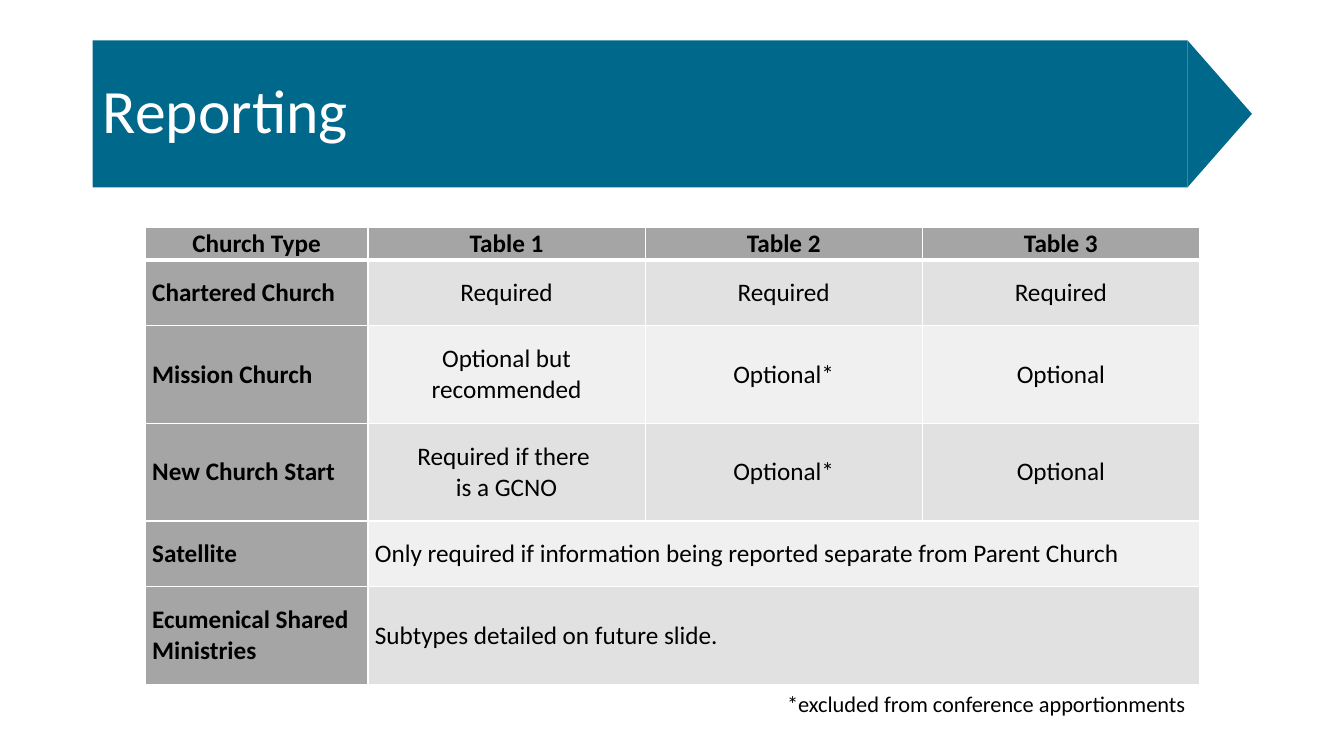
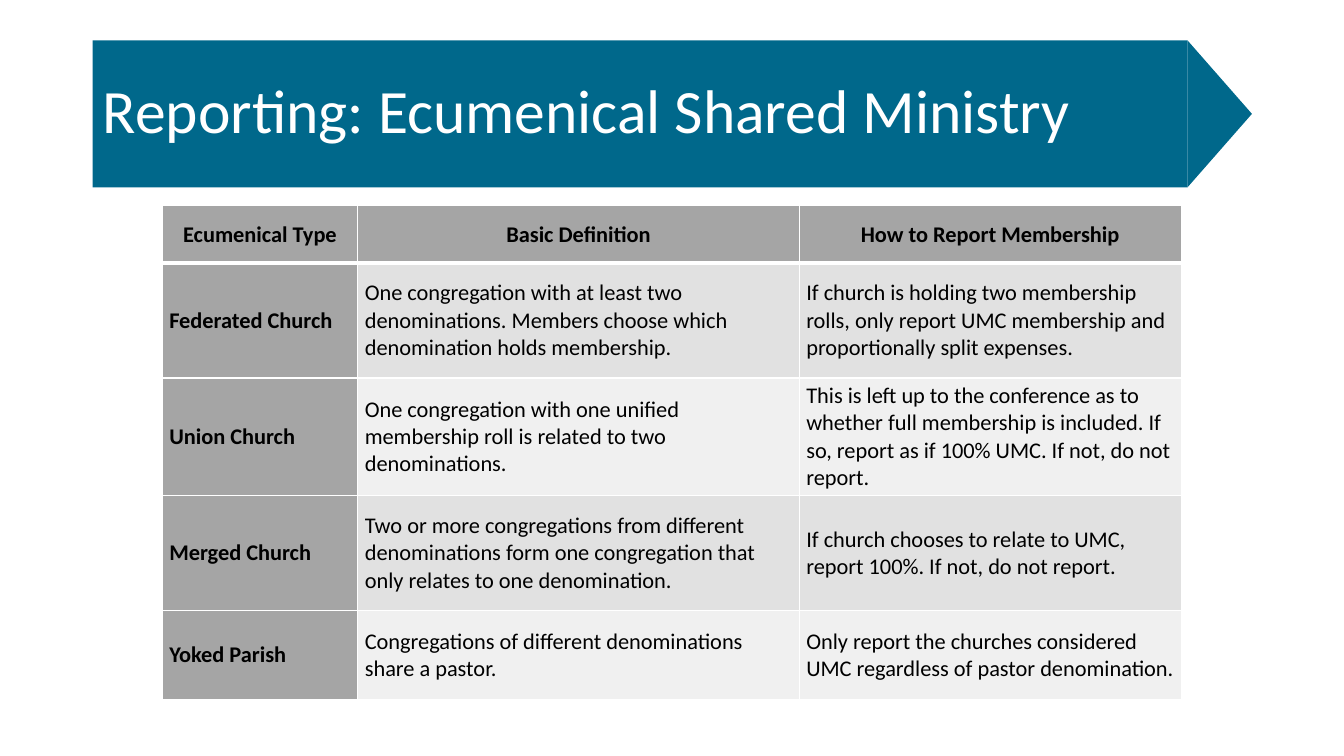
"""Build two slides on church reporting, each with a banner title and a table."""
import pptx
import pptx.util
from lxml import etree
from pptx.dml.color import RGBColor
from pptx.enum.shapes import MSO_SHAPE
from pptx.enum.text import MSO_ANCHOR, MSO_AUTO_SIZE, PP_ALIGN
from pptx.oxml.ns import qn

BLUE = RGBColor(0x00, 0x68, 0x8B)
WHITE = RGBColor(0xFF, 0xFF, 0xFF)
BLACK = RGBColor(0x00, 0x00, 0x00)
HEADING = RGBColor(0xA5, 0xA5, 0xA5)
BANDS = (RGBColor(0xE1, 0xE1, 0xE1), RGBColor(0xF0, 0xF0, 0xF0))
FONT = "Calibri"
EMU_PER_PX = 9144

BANNER = (92, 40, 1086, 146)
TITLE_BOX = (92, 40, 1150, 145)
ARROW_DEPTH = 64

SLIDES = [
    {
        "title": "Reporting",
        "at": (144, 226),
        "cols": (221, 275, 275, 275),
        "heights": (32, 65, 97, 97, 65, 97),
        "size": 18,
        "align": PP_ALIGN.CENTER,
        "rows": [
            ("Church Type", "Table 1", "Table 2", "Table 3"),
            ("Chartered Church", "Required", "Required", "Required"),
            ("Mission Church", "Optional but recommended", "Optional*", "Optional"),
            ("New Church Start", "Required if there \vis a GCNO", "Optional*", "Optional"),
            ("Satellite",
             "Only required if information being reported separate from Parent Church"),
            ("Ecumenical Shared Ministries", "Subtypes detailed on future slide."),
        ],
        "footnote": "*excluded from conference apportionments",
    },
    {
        "title": "Reporting: Ecumenical Shared Ministry",
        "at": (161, 204),
        "cols": (194, 438, 379),
        "heights": (57, 114, 117, 114, 88),
        "size": 16,
        "align": PP_ALIGN.LEFT,
        "rows": [
            ("Ecumenical Type", "Basic Definition", "How to Report Membership"),
            ("Federated Church",
             "One congregation with at least two denominations. Members choose which "
             "denomination holds membership.",
             "If church is holding two membership rolls, only report UMC membership and "
             "proportionally split expenses."),
            ("Union Church",
             "One congregation with one unified membership roll is related to two "
             "denominations.",
             "This is left up to the conference as to whether full membership is included. "
             "If so, report as if 100% UMC. If not, do not report."),
            ("Merged Church",
             "Two or more congregations from different denominations form one congregation "
             "that only relates to one denomination.",
             "If church chooses to relate to UMC, report 100%. If not, do not report."),
            ("Yoked Parish",
             "Congregations of different denominations share a pastor.",
             "Only report the churches considered UMC regardless of pastor denomination."),
        ],
    },
]
FOOTNOTE_BOX = (768, 680, 421, 37)


def px(*lengths):
    return [pptx.util.Emu(round(n * EMU_PER_PX)) for n in lengths]


def style(p, size, color, bold=False, align=PP_ALIGN.LEFT):
    p.alignment = align
    p.font.name = FONT
    p.font.size = pptx.util.Pt(size)
    p.font.color.rgb = color
    p.font.bold = bold


def prepare_layout(layout, s):
    title, *footers = layout.placeholders
    for ph in footers:
        ph.element.getparent().remove(ph.element)
    title.left, title.top, title.width, title.height = px(*TITLE_BOX)
    x, y, w, h = BANNER
    arrow_box = (x + w + (ARROW_DEPTH - h) / 2, y + (h - ARROW_DEPTH) / 2, h, ARROW_DEPTH)
    band = s.shapes.add_shape(MSO_SHAPE.RECTANGLE, *px(*BANNER))
    arrow = s.shapes.add_shape(MSO_SHAPE.ISOSCELES_TRIANGLE, *px(*arrow_box))
    arrow.rotation = 90
    for sp in (band, arrow):
        sp.shadow.inherit = False
        sp.fill.solid()
        sp.fill.fore_color.rgb = BLUE
        sp.line.fill.background()
        title.element.addprevious(sp.element)


def add_title(s, text):
    tf = s.shapes.title.text_frame
    tf.text = text
    tf.auto_size = MSO_AUTO_SIZE.NONE
    tf.vertical_anchor = MSO_ANCHOR.MIDDLE
    p = tf.paragraphs[0]
    p.line_spacing = 0.9
    style(p, 44, WHITE)


def add_borders(cell, row):
    tc_pr = cell._tc.get_or_add_tcPr()
    widths = {"lnL": 1, "lnR": 1, "lnT": 3 if row == 1 else 1, "lnB": 3 if row == 0 else 1}
    for tag, width in widths.items():
        ln = etree.SubElement(tc_pr, qn("a:" + tag), w=str(pptx.util.Pt(width)))
        fill = etree.SubElement(ln, qn("a:solidFill"))
        etree.SubElement(fill, qn("a:srgbClr"), val=str(WHITE))


def format_cell(cell, row, color):
    add_borders(cell, row)
    cell.fill.solid()
    cell.fill.fore_color.rgb = color
    cell.vertical_anchor = MSO_ANCHOR.MIDDLE
    cell.margin_left, cell.margin_right, cell.margin_top, cell.margin_bottom = px(7, 7, 0, 0)


def add_grid(s, data):
    cols, heights, rows = data["cols"], data["heights"], data["rows"]
    table = s.shapes.add_table(len(rows), len(cols),
                               *px(*data["at"], sum(cols), sum(heights))).table
    table.horz_banding = False
    for column, width in zip(table.columns, px(*cols)):
        column.width = width
    for row, height in zip(table.rows, px(*heights)):
        row.height = height
    for i, texts in enumerate(rows):
        spans = len(texts) < len(cols)
        for j in range(len(cols)):
            heading = i == 0 or j == 0
            format_cell(table.cell(i, j), i, HEADING if heading else BANDS[(i - 1) % 2])
        for j, text in enumerate(texts):
            if i == 0:
                align = PP_ALIGN.CENTER
            else:
                align = PP_ALIGN.LEFT if j == 0 or spans else data["align"]
            tf = table.cell(i, j).text_frame
            tf.text = text
            style(tf.paragraphs[0], data["size"], BLACK, i == 0 or j == 0, align)
        if spans:
            table.cell(i, len(texts) - 1).merge(table.cell(i, len(cols) - 1))


def add_footnote(s, text):
    tf = s.shapes.add_textbox(*px(*FOOTNOTE_BOX)).text_frame
    tf.word_wrap = True
    tf.text = text
    style(tf.paragraphs[0], 16, BLACK, align=PP_ALIGN.CENTER)


def main():
    prs = pptx.Presentation()
    prs.slide_width, prs.slide_height = px(1333.33, 750)
    layout = prs.slide_layouts[5]
    for i, data in enumerate(SLIDES):
        s = prs.slides.add_slide(layout)
        if i == 0:
            prepare_layout(layout, s)
        add_title(s, data["title"])
        add_grid(s, data)
        if "footnote" in data:
            add_footnote(s, data["footnote"])
    prs.save("out.pptx")


if __name__ == "__main__":
    main()
